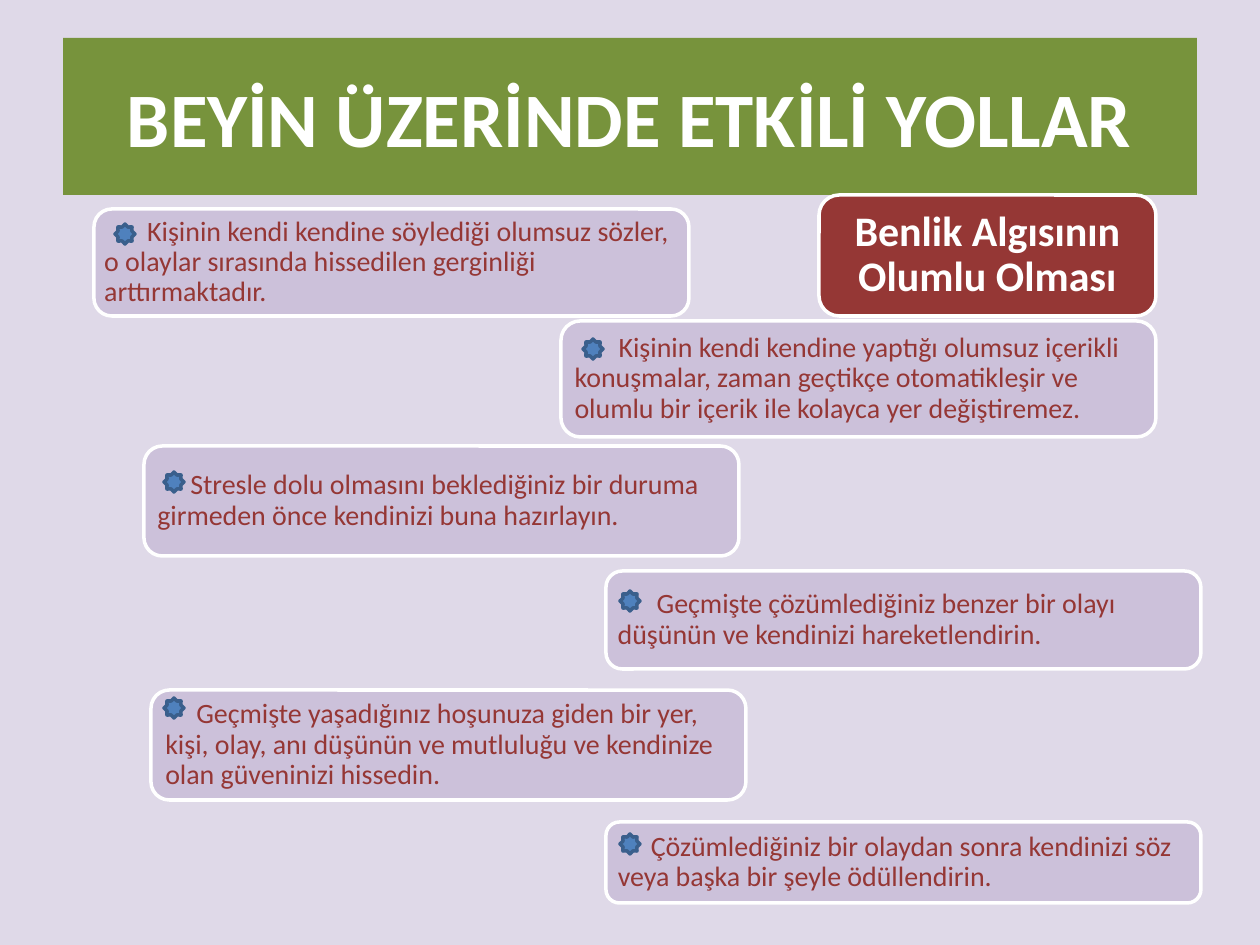
from pptx import Presentation
from pptx import util as u
from pptx.dml.color import RGBColor
from pptx.enum import shapes, text

PX_PER_INCH = 126
FONT = "Calibri"
WHITE = RGBColor(0xFF, 0xFF, 0xFF)
GREEN = RGBColor(0x77, 0x93, 0x3C)
RED = RGBColor(0x95, 0x37, 0x35)
LILAC = RGBColor(0xCC, 0xC1, 0xDA)
PALE_LILAC = RGBColor(0xDF, 0xD9, 0xE8)
BLUE = RGBColor(0x4F, 0x81, 0xBD)
DARK_BLUE = RGBColor(0x3A, 0x5F, 0x8C)

CARD_WIDTH = 595
STAR_SIZE = 20

CARDS = [
    ((94, 209, CARD_WIDTH, 107), 10, 43, (21, 15),
     "Kişinin kendi kendine söylediği olumsuz sözler, o olaylar sırasında "
     "hissedilen gerginliği arttırmaktadır."),
    ((561, 321, CARD_WIDTH, 116), 14, 44, (22, 18),
     "Kişinin kendi kendine yaptığı olumsuz içerikli konuşmalar, zaman geçtikçe "
     "otomatikleşir ve olumlu bir içerik ile kolayca yer değiştiremez."),
    ((144, 446, CARD_WIDTH, 110), 13, 33, (20, 26),
     "Stresle dolu olmasını beklediğiniz bir duruma girmeden önce kendinizi "
     "buna hazırlayın."),
    ((606, 571, CARD_WIDTH, 98), 12, 39, (14, 20),
     "Geçmişte çözümlediğiniz benzer bir olayı düşünün ve kendinizi "
     "hareketlendirin."),
    ((151, 690, CARD_WIDTH, 110), 14, 31, (13, 8),
     "Geçmişte yaşadığınız hoşunuza giden bir yer, kişi, olay, anı düşünün ve "
     "mutluluğu ve kendinize olan güveninizi hissedin."),
    ((606, 822, CARD_WIDTH, 81), 12, 33, (14, 12),
     "Çözümlediğiniz bir olaydan sonra kendinizi söz veya başka bir şeyle "
     "ödüllendirin."),
]


def px(length):
    return u.Emu(length * 914400 // PX_PER_INCH)


def paint(shape, color):
    shape.fill.solid()
    shape.fill.fore_color.rgb = color


def add_outlined(page, kind, box, fill, line):
    shape = page.shapes.add_shape(kind, *map(px, box))
    shape.shadow.inherit = False
    paint(shape, fill)
    shape.line.color.rgb = line
    shape.line.width = u.Pt(2)
    return shape


def write(shape, words, size, color, bold, align, inset):
    frame = shape.text_frame
    frame.text = words
    frame.word_wrap = True
    frame.vertical_anchor = text.MSO_ANCHOR.MIDDLE
    frame.margin_left = frame.margin_right = px(inset)
    frame.margin_top = frame.margin_bottom = px(4)
    para = frame.paragraphs[0]
    para.alignment = align
    para.line_spacing = 0.9
    font = para.runs[0].font
    font.name = FONT
    font.size = u.Pt(size)
    font.bold = bold
    font.color.rgb = color
    return para


def place_title(page, box):
    title = page.shapes.title
    title.left, title.top, title.width, title.height = map(px, box)
    paint(title, GREEN)
    para = write(title, "BEYİN ÜZERİNDE ETKİLİ YOLLAR", 44, WHITE, True,
                 text.PP_ALIGN.CENTER, 12)
    para.line_spacing = 1.0


def add_heading(page, box):
    heading = add_outlined(page, shapes.MSO_SHAPE.ROUNDED_RECTANGLE, box, RED, WHITE)
    write(heading, "Benlik Algısının Olumlu Olması", 24, WHITE, True,
          text.PP_ALIGN.CENTER, 18)


def add_card(page, box, inset, indent, star_offset, words):
    card = add_outlined(page, shapes.MSO_SHAPE.ROUNDED_RECTANGLE, box, LILAC, WHITE)
    # The preset's text area already starts inside the rounded corner.
    corner_inset = round(min(box[2:]) * 0.1667 * 0.29)
    para = write(card, words, 16, RED, False, text.PP_ALIGN.LEFT,
                 inset - corner_inset)
    para._p.get_or_add_pPr().set("indent", str(px(indent)))
    left, top = box[0] + star_offset[0], box[1] + star_offset[1]
    add_outlined(page, shapes.MSO_SHAPE.STAR_8_POINT,
                 (left, top, STAR_SIZE, STAR_SIZE), BLUE, DARK_BLUE)


def main():
    deck = Presentation()
    deck.slide_width, deck.slide_height = px(1260), px(945)
    page = deck.slides.add_slide(deck.slide_layouts[5])
    paint(page.background, PALE_LILAC)
    place_title(page, (63, 38, 1134, 157))
    add_heading(page, (819, 195, 337, 121))
    for card in CARDS:
        add_card(page, *card)
    deck.save("out.pptx")


if __name__ == "__main__":
    main()
